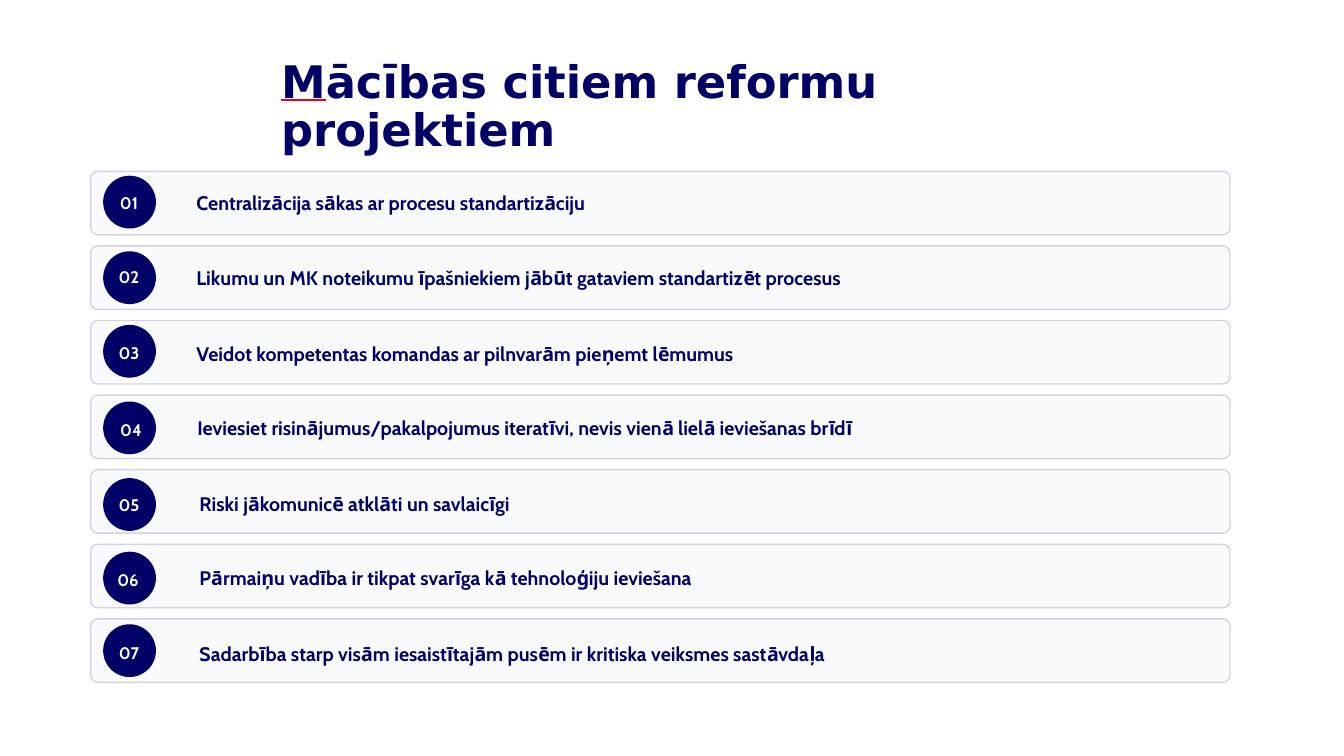
from lxml import etree
from pptx import Presentation
from pptx.dml.color import RGBColor
from pptx.enum.shapes import MSO_SHAPE
from pptx.enum.text import MSO_ANCHOR, PP_ALIGN
from pptx.oxml.ns import qn
from pptx.util import Inches, Pt

ROUNDED, OVAL = MSO_SHAPE.ROUNDED_RECTANGLE, MSO_SHAPE.OVAL
TOP, MIDDLE = MSO_ANCHOR.TOP, MSO_ANCHOR.MIDDLE
LEFT, CENTER = PP_ALIGN.LEFT, PP_ALIGN.CENTER

# Content
TITLE = ("M", "ācības citiem reformu projektiem")
# lesson, badge drop in row, number (left, drop), lesson (left, drop)
LESSONS = [
    ("Centralizācija sākas ar procesu standartizāciju",
     0.05, (0.98, 0.01), (1.85, 0)),
    ("Likumu un MK noteikumu īpašniekiem jābūt gataviem standartizēt procesus",
     0.06, (0.98, 0.01), (1.85, 0)),
    ("Veidot kompetentas komandas ar pilnvarām pieņemt lēmumus",
     0.05, (0.98, 0.02), (1.85, 0.01)),
    ("Ieviesiet risinājumus/pakalpojumus iteratīvi, nevis vienā lielā ieviešanas brīdī",
     0.07, (1.0, 0.04), (1.86, 0.01)),
    ("Riski jākomunicē atklāti un savlaicīgi",
     0.09, (0.98, 0.05), (1.88, 0.02)),
    ("Pārmaiņu vadība ir tikpat svarīga kā tehnoloģiju ieviešana",
     0.08, (0.97, 0.05), (1.88, 0.02)),
    ("Sadarbība starp visām iesaistītajām pusēm ir kritiska veiksmes sastāvdaļa",
     0.06, (0.98, 0.04), (1.88, 0.03)),
]

# Look and layout
NAVY, WHITE, PALE, GREY, RED = "000066", "FFFFFF", "F8FAFC", "D1D5DB", "E4002B"
ROW_LEFT, ROW_TOP, ROW_STEP = 0.9, 1.7, 0.74
ROW_WIDTH, ROW_HEIGHT = 11.3, 0.63
BADGE_LEFT, BADGE_SIZE = 1.03, 0.51
NUMBER_SIZE, LESSON_WIDTH = 0.6, 10.2

prs = Presentation()
prs.slide_width, prs.slide_height = Inches(13.33), Inches(7.5)
slide = prs.slides.add_slide(prs.slide_layouts[6])


def rgb(value):
    return RGBColor.from_string(value)


def add_shape(kind, left, top, width, height, fill, line):
    shape = slide.shapes.add_shape(
        kind, Inches(left), Inches(top), Inches(width), Inches(height))
    shape.shadow.inherit = False
    shape.fill.solid()
    shape.fill.fore_color.rgb = rgb(fill)
    shape.line.color.rgb = rgb(line)
    shape.line.width = Pt(1)
    return shape


def add_text(runs, left, top, width, height, size, color,
             font="Cabin", align=LEFT, anchor=MIDDLE):
    frame = slide.shapes.add_textbox(
        Inches(left), Inches(top), Inches(width), Inches(height)).text_frame
    frame.word_wrap = True
    frame.vertical_anchor = anchor
    paragraph = frame.paragraphs[0]
    paragraph.alignment = align
    for text in runs:
        run = paragraph.add_run()
        run.text = text
        run.font.size, run.font.bold, run.font.name = Pt(size), True, font
        run.font.color.rgb = rgb(color)
    return paragraph


# Title, its first letter underlined in red
title = add_text(TITLE, 2.69, 0.54, 7.86, 1.16, 32, NAVY, "DejaVu Sans", anchor=TOP)
title.line_spacing = 0.9
initial = title.runs[0].font
initial.underline = True
underline = etree.Element(qn("a:uFill"))
underline_fill = etree.SubElement(underline, qn("a:solidFill"))
etree.SubElement(underline_fill, qn("a:srgbClr"), val=RED)
title.runs[0]._r.rPr.find(qn("a:latin")).addprevious(underline)

# Numbered lessons
for i, (lesson, badge_drop, number_at, lesson_at) in enumerate(LESSONS):
    top = ROW_TOP + i * ROW_STEP
    row = add_shape(ROUNDED, ROW_LEFT, top, ROW_WIDTH, ROW_HEIGHT, PALE, GREY)
    row.adjustments[0] = 0.11
    add_shape(OVAL, BADGE_LEFT, top + badge_drop, BADGE_SIZE, BADGE_SIZE, NAVY, NAVY)
    add_text([f"{i + 1:02}"], number_at[0], top + number_at[1],
             NUMBER_SIZE, NUMBER_SIZE, 12, WHITE, align=CENTER)
    add_text([lesson], lesson_at[0], top + lesson_at[1],
             LESSON_WIDTH, ROW_HEIGHT, 14, NAVY)

prs.save("out.pptx")
